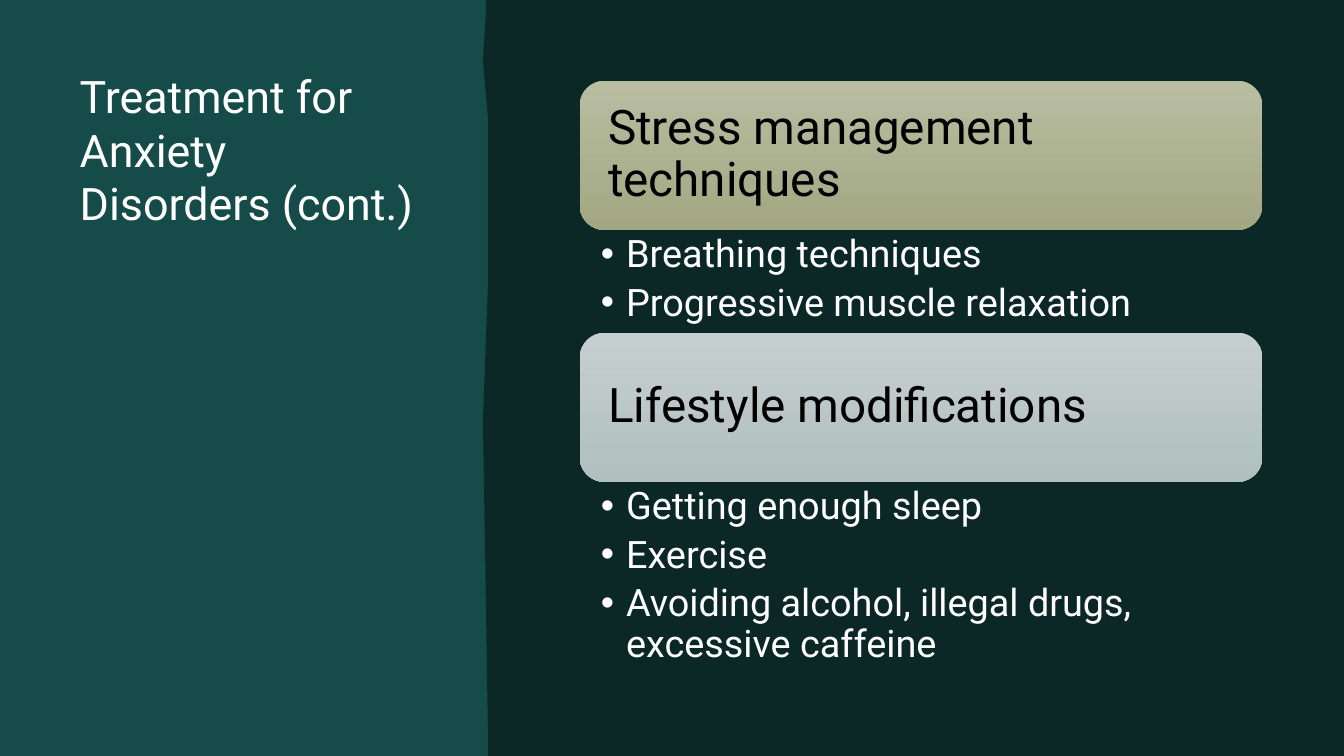
from lxml.etree import SubElement
from pptx import Presentation
from pptx.dml.color import RGBColor
from pptx.enum.shapes import MSO_SHAPE
from pptx.enum.text import MSO_ANCHOR, MSO_AUTO_SIZE, PP_ALIGN
from pptx.oxml.ns import qn
from pptx.util import Inches, Pt

FONT = "Roboto"
DARK, TEAL, WHITE, BLACK = "0B2827", "154C4A", "FFFFFF", "000000"
LEFT, WIDTH, HEADING_HEIGHT = 5.75, 6.77, 1.48
EDGE = [(4.82, 0), (13.33, 0), (13.33, 7.5), (4.84, 7.5), (4.84, 7.29), (4.79, 4.17),
        (4.84, 2.81), (4.84, 1.18), (4.79, 0.6), (4.82, 0.11)]
SECTIONS = [
    (0.8, 1.02, ("B9BDA2", "A2A782"), "Stress management techniques",
     ["Breathing techniques", "Progressive muscle relaxation"]),
    (3.3, 1.92, ("C6CFCF", "B1BFBF"), "Lifestyle modifications",
     ["Getting enough sleep", "Exercise", "Avoiding alcohol, illegal drugs, excessive caffeine"]),
]


def color(value):
    """Turn a hex string into a colour."""
    return RGBColor.from_string(value)


def place(sp, left, top, width, height):
    """Move and size a shape, in inches."""
    sp.left, sp.top, sp.width, sp.height = map(Inches, (left, top, width, height))


def set_frame(tf, insets, anchor=MSO_ANCHOR.TOP):
    """Set the insets, wrapping and anchor of a text frame."""
    tf.word_wrap = True
    tf.auto_size = MSO_AUTO_SIZE.NONE
    tf.vertical_anchor = anchor
    tf.margin_left, tf.margin_top, tf.margin_right, tf.margin_bottom = map(Inches, insets)


def write(p, text, size, fill, spacing=1.0, after=0):
    """Write one left-aligned run into a paragraph."""
    p.alignment = PP_ALIGN.LEFT
    p.line_spacing = spacing
    p.space_before, p.space_after = Pt(0), Pt(after)
    r = p.add_run()
    r.text = text
    r.font.name, r.font.size = FONT, Pt(size)
    r.font.color.rgb = color(fill)


def add_bullet(p):
    """Give a paragraph a hanging round bullet."""
    pPr = p._p.get_or_add_pPr()
    pPr.set("marL", str(Inches(0.25)))
    pPr.set("indent", str(Inches(-0.25)))
    SubElement(pPr, qn("a:buChar")).set("char", "•")


def style_panel(slide, sp, fill, level):
    """Fill a backdrop shape and send it behind the text."""
    sp.shadow.inherit = False
    sp.fill.solid()
    sp.fill.fore_color.rgb = color(fill)
    sp.line.fill.background()
    slide.shapes._spTree.insert(2 + level, sp._element)


def add_backdrop(prs, slide):
    """Draw the teal panel and the dark area with its uneven edge."""
    panel = slide.shapes.add_shape(MSO_SHAPE.RECTANGLE, 0, 0, prs.slide_width, prs.slide_height)
    style_panel(slide, panel, TEAL, 0)
    points = [(Inches(x), Inches(y)) for x, y in EDGE]
    builder = slide.shapes.build_freeform(*points[0])
    builder.add_line_segments(points[1:], close=True)
    style_panel(slide, builder.convert_to_shape(), DARK, 1)


def add_heading(slide, top, shades, text):
    """Add a rounded gradient box with a section heading."""
    sp = slide.shapes.add_shape(MSO_SHAPE.ROUNDED_RECTANGLE, 0, 0, 0, 0)
    place(sp, LEFT, top, WIDTH, HEADING_HEIGHT)
    sp.shadow.inherit = False
    sp.line.fill.background()
    sp.fill.gradient()
    sp.fill.gradient_angle = 270
    for stop, shade in zip(sp.fill.gradient_stops, shades):
        stop.color.rgb = color(shade)
    set_frame(sp.text_frame, (0.21, 0.21, 0.21, 0.21), MSO_ANCHOR.MIDDLE)
    write(sp.text_frame.paragraphs[0], text, 34, BLACK, spacing=0.9)


def fill_list(sp, top, height, items):
    """Place a body placeholder and fill it with bullets."""
    place(sp, LEFT, top, WIDTH, height)
    tf = sp.text_frame
    set_frame(tf, (0.21, 0.05, 0.26, 0.05))
    for i, item in enumerate(items):
        p = tf.add_paragraph() if i else tf.paragraphs[0]
        write(p, item, 27, WHITE, spacing=0.9, after=5.4)
        add_bullet(p)


def main():
    """Build and save the slide."""
    prs = Presentation()
    prs.slide_width, prs.slide_height = Inches(13.33), Inches(7.5)
    slide = prs.slides.add_slide(prs.slide_layouts[3])
    slide.background.fill.solid()
    slide.background.fill.fore_color.rgb = color(DARK)
    add_backdrop(prs, slide)

    title, *bodies = slide.placeholders
    place(title, 0.79, 0.68, 3.4, 6.03)
    set_frame(title.text_frame, (0, 0, 0, 0))
    write(title.text_frame.paragraphs[0], "Treatment for Anxiety Disorders (cont.)", 32, WHITE)

    for body, (top, height, shades, heading, items) in zip(bodies, SECTIONS):
        add_heading(slide, top, shades, heading)
        fill_list(body, top + HEADING_HEIGHT, height, items)
    prs.save("out.pptx")


if __name__ == "__main__":
    main()
